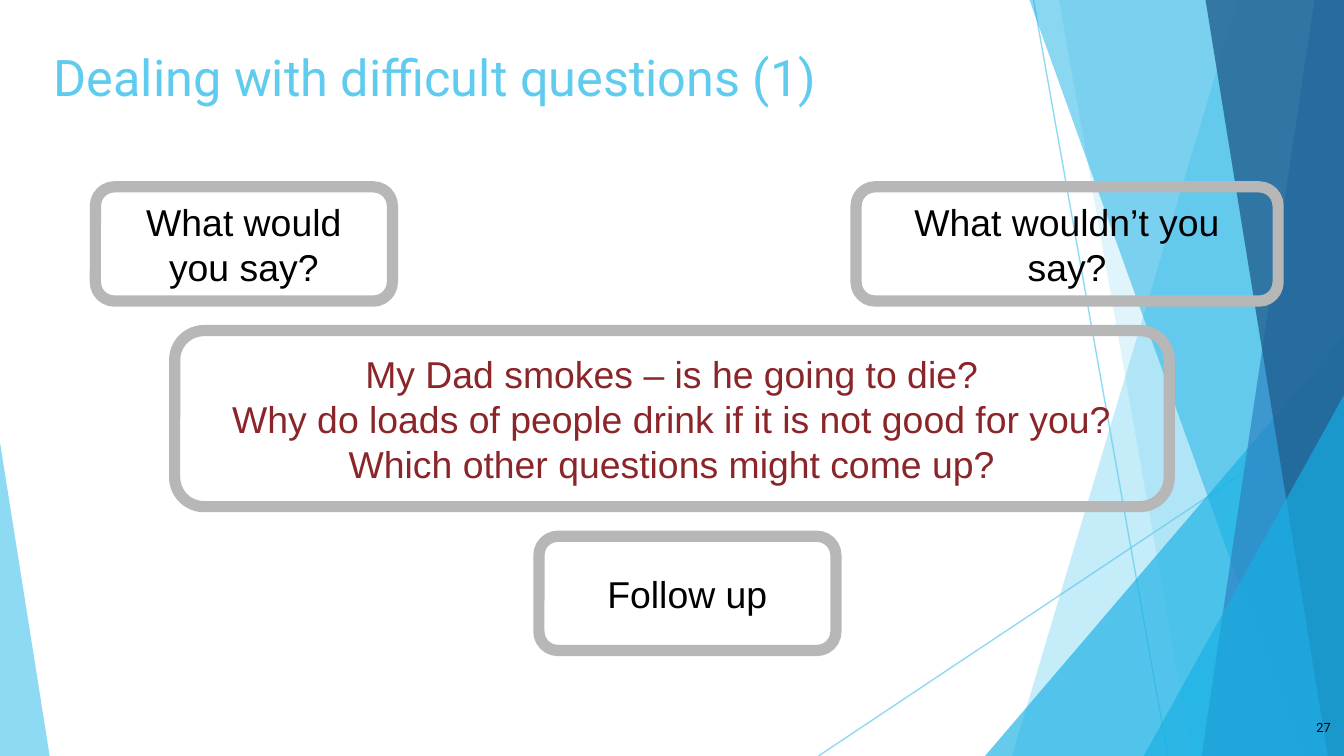
"""Builds the slide on dealing with difficult questions."""
from lxml.etree import SubElement
from pptx import Presentation
from pptx.dml.color import RGBColor
from pptx.enum.shapes import MSO_CONNECTOR as Connector, MSO_SHAPE as Shape
from pptx.enum.text import MSO_ANCHOR as Anchor, MSO_AUTO_SIZE as AutoSize, PP_ALIGN as Align
from pptx.oxml.ns import qn
from pptx.util import Inches, Pt

COLUMNS = 10
ROWS = COLUMNS * 9 / 16
SLIDE_WIDTH, SLIDE_HEIGHT = Inches(COLUMNS), Inches(ROWS)
SKY, AZURE, BLUE, NAVY = "5FCBEF", "17B0E4", "2E83C3", "226292"
GREY, MAROON, BLACK = "B7B7B7", "8A2529", "000000"
PROMPT_TOP, PROMPT_WIDTH, PROMPT_HEIGHT = 1.39, 2.21, 0.85


def color(hex_string):
    """Turn a hex string into a colour."""
    return RGBColor.from_string(hex_string)


def grid(column, row):
    """Convert a grid position or size to slide lengths."""
    return round(column * SLIDE_WIDTH / COLUMNS), round(row * SLIDE_HEIGHT / ROWS)


def paint(fill, hex_string, opacity):
    """Give a fill a colour that is opaque to the given percentage."""
    fill.solid()
    fill.fore_color.rgb = color(hex_string)
    tint = fill._xPr.find(qn("a:solidFill"))[0]
    SubElement(tint, qn("a:alpha"), val=str(opacity * 1000))


def add_ray(slide, start, end):
    """Draw a thin translucent line across the backdrop."""
    ray = slide.shapes.add_connector(Connector.STRAIGHT, *grid(*start), *grid(*end))
    ray.line.width = Pt(0.75)
    paint(ray.line.fill, SKY, 70)
    SubElement(ray._element.spPr, qn("a:effectLst"))


def add_band(slide, top_column, bottom_column, hex_string, opacity):
    """Fill the area between a slanted edge and the slide's right side."""
    builder = slide.shapes.build_freeform(*grid(top_column, 0))
    corners = [(COLUMNS, 0), (COLUMNS, ROWS), (bottom_column, ROWS)]
    builder.add_line_segments([grid(*corner) for corner in corners])
    band = builder.convert_to_shape()
    paint(band.fill, hex_string, opacity)
    band.line.fill.background()
    band.shadow.inherit = False


def add_wedge(slide, left, top, width, apex, hex_string, opacity):
    """Stand a triangle on the slide's bottom edge."""
    wedge = slide.shapes.add_shape(Shape.ISOSCELES_TRIANGLE, *grid(left, top), *grid(width, ROWS - top))
    wedge.adjustments[0] = apex
    paint(wedge.fill, hex_string, opacity)
    wedge.line.fill.background()
    wedge.shadow.inherit = False


def write(frame, text, size, font, hex_string, align, anchor=Anchor.MIDDLE):
    """Set the text of a frame and format all of it."""
    frame.text = text
    frame.word_wrap = True
    frame.auto_size = AutoSize.NONE
    frame.vertical_anchor = anchor
    frame.margin_left = frame.margin_right = Inches(0.1)
    frame.margin_top = frame.margin_bottom = Inches(0.1)
    for paragraph in frame.paragraphs:
        paragraph.alignment = align
        for run in paragraph.runs:
            run.font.size = Pt(size)
            run.font.name = font
            run.font.color.rgb = color(hex_string)


def add_box(slide, left, top, width, height, text, hex_string=BLACK):
    """Add a rounded outline with centred text."""
    box = slide.shapes.add_shape(Shape.ROUNDED_RECTANGLE, *grid(left, top), *grid(width, height))
    box.fill.background()
    box.line.color.rgb = color(GREY)
    box.line.width = Pt(6)
    box.shadow.inherit = False
    write(box.text_frame, text, 20, "Arial", hex_string, Align.CENTER)


def add_backdrop(slide):
    """Layer the translucent facets along the slide's sides."""
    add_ray(slide, (7.69, 0), (8.69, ROWS))
    add_ray(slide, (COLUMNS, 3.02), (6.09, ROWS))
    add_band(slide, 9.21, 7.53, SKY, 36)
    add_band(slide, 7.88, 8.87, SKY, 20)
    add_wedge(slide, 7.33, 2.5, 2.67, 1, AZURE, 66)
    add_band(slide, 7.66, 9.68, AZURE, 50)
    add_band(slide, 9.78, 8.94, BLUE, 70)
    add_band(slide, 8.97, 9.88, NAVY, 80)
    add_wedge(slide, 8.51, 2.94, 1.49, 1, AZURE, 66)
    add_wedge(slide, 0, 3.29, 0.37, 0, SKY, 70)


def add_title(slide, text):
    """Move the title placeholder and fill it."""
    title = slide.shapes.title
    title.left, title.top = grid(0.3, 0.24)
    title.width, title.height = grid(8.48, 0.63)
    write(title.text_frame, text, 27, "Roboto", SKY, Align.LEFT, Anchor.TOP)


def add_page_number(slide, number):
    """Put the page number in the bottom right corner."""
    width, height = 0.6, 0.43
    corner = slide.shapes.add_textbox(*grid(COLUMNS - width, ROWS - height), *grid(width, height))
    write(corner.text_frame, number, 6.8, "Roboto", BLACK, Align.RIGHT)


def main():
    """Build and save the slide."""
    deck = Presentation()
    deck.slide_width, deck.slide_height = SLIDE_WIDTH, SLIDE_HEIGHT
    slide = deck.slides.add_slide(deck.slide_layouts[5])
    add_backdrop(slide)
    add_title(slide, "Dealing with difficult questions (1)")
    add_page_number(slide, "27")
    questions = [
        "My Dad smokes – is he going to die?",
        "Why do loads of people drink if it is not good for you?",
        "Which other questions might come up?",
    ]
    add_box(slide, 1.3, 2.46, 7.4, 1.31, "\n".join(questions), MAROON)
    add_box(slide, 0.71, PROMPT_TOP, PROMPT_WIDTH, PROMPT_HEIGHT, "What would you say?")
    add_box(slide, 6.37, PROMPT_TOP, 3.14, PROMPT_HEIGHT, "What wouldn’t you say?")
    add_box(slide, 4.01, 3.99, PROMPT_WIDTH, PROMPT_HEIGHT, "Follow up")
    deck.save("out.pptx")


if __name__ == "__main__":
    main()
